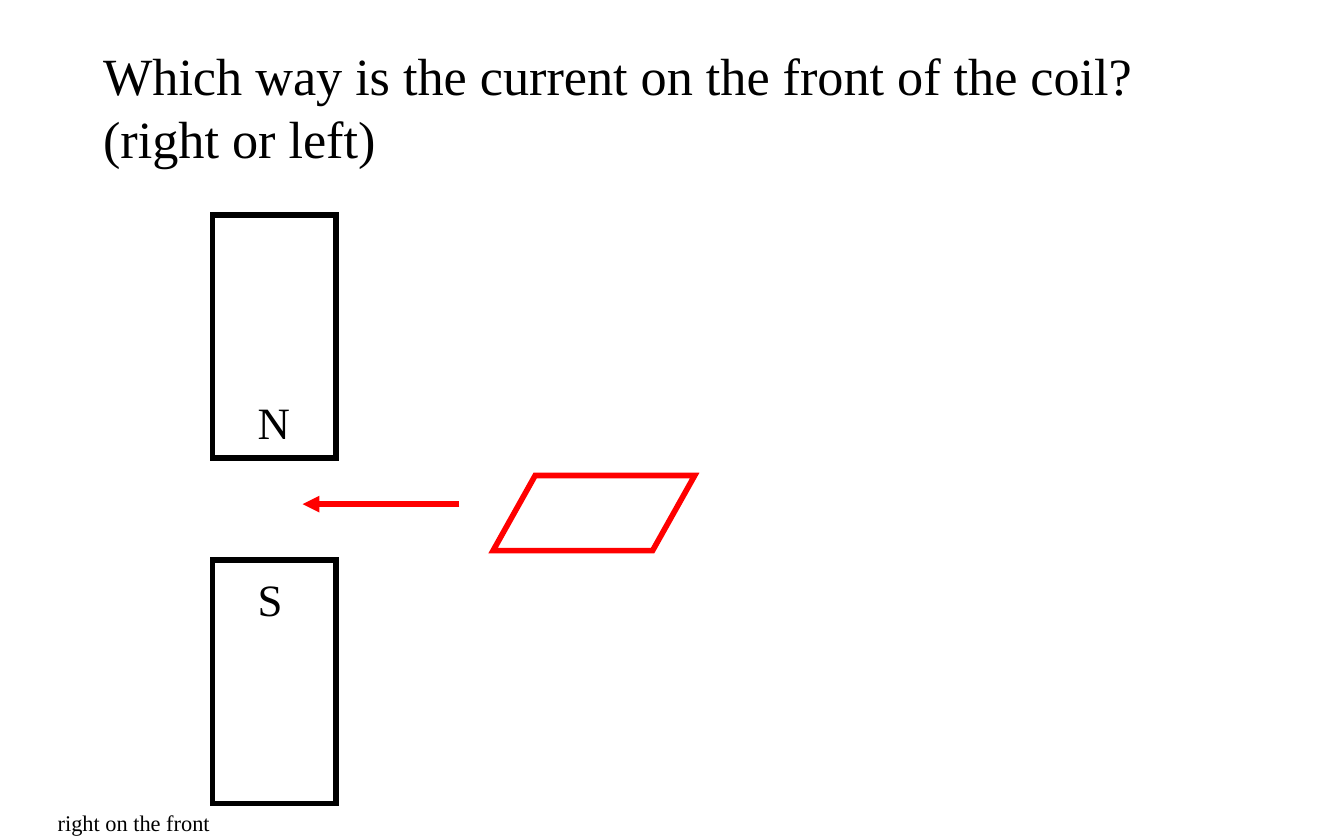
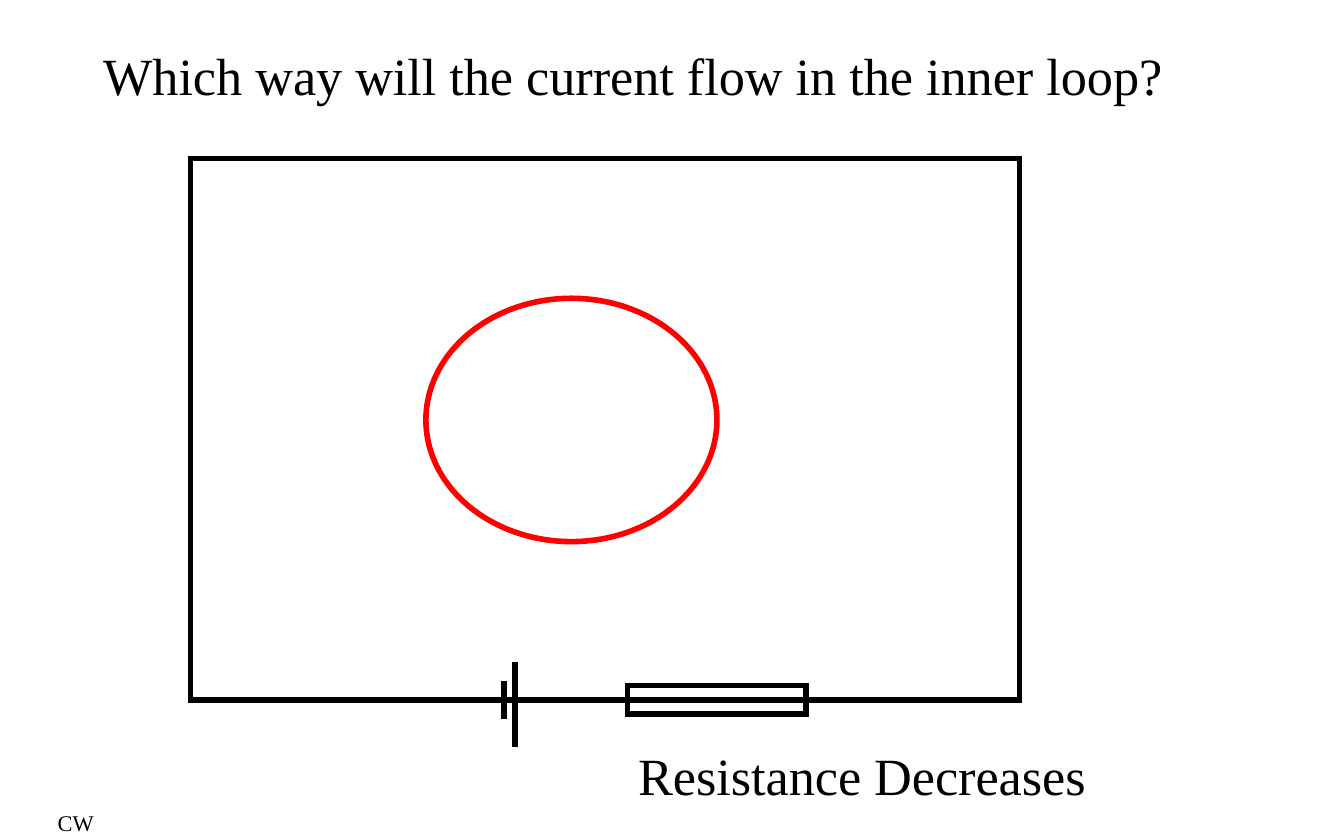
"""Build two slides of questions on induced current."""
from lxml import etree
from pptx import Presentation
from pptx.dml.color import RGBColor
from pptx.enum.shapes import MSO_CONNECTOR, MSO_SHAPE
from pptx.enum.text import MSO_AUTO_SIZE
from pptx.oxml.ns import qn
from pptx.util import Cm, Pt

RECT = MSO_SHAPE.RECTANGLE
OVAL = MSO_SHAPE.OVAL
SLANT = MSO_SHAPE.PARALLELOGRAM
STRAIGHT = MSO_CONNECTOR.STRAIGHT
FIT = MSO_AUTO_SIZE.SHAPE_TO_FIT_TEXT

BLACK = RGBColor(0, 0, 0)
RED = RGBColor(255, 0, 0)
FONT = "Times New Roman"


def write(slide, text, box, size, wrap=False):
    frame = slide.shapes.add_textbox(*map(Cm, box)).text_frame
    frame.word_wrap = wrap
    frame.auto_size = FIT
    frame.text = text
    font = frame.paragraphs[0].runs[0].font
    font.name = FONT
    font.size = Pt(size)
    font.color.rgb = BLACK


def draw(slide, kind, box, color=BLACK):
    if kind is STRAIGHT:
        shape = slide.shapes.add_connector(kind, *map(Cm, box))
        etree.SubElement(shape.element.spPr, qn("a:effectLst"))
    else:
        shape = slide.shapes.add_shape(kind, *map(Cm, box))
        shape.shadow.inherit = False
        shape.fill.background()
    shape.line.color.rgb = color
    shape.line.width = Pt(3)
    edge = shape.element.spPr.find(qn("a:ln"))
    etree.SubElement(edge, qn("a:miter"), lim="800000")
    return shape


deck = Presentation()
deck.slide_width = Cm(25.4)
deck.slide_height = Cm(15.88)

pages = []
for title, high, answer, wide in [
    ("Which way is the current on the front of the coil? (right or left)",
     2.64, "right on the front", 3.43),
    ("Which way will the current flow in the inner loop?", 1.45, "CW", 1.19),
]:
    page = deck.slides.add_slide(deck.slide_layouts[6])
    write(page, title, (1.7, 0.7, 22.23, high), 28, wrap=True)
    write(page, answer, (0.84, 15.18, wide, 0.76), 12)
    pages.append(page)
field, loop = pages

for pole, top, mark, wide in [("N", 4.06, 7.33, 1.14), ("S", 10.59, 10.68, 0.99)]:
    draw(field, RECT, (4.02, top, 2.33, 4.6))
    write(field, pole, (4.62, mark, wide, 1.27), 24)

coil = draw(field, SLANT, (9.32, 8.99, 3.81, 1.42), RED)
coil.adjustments[0] = 0.56
motion = draw(field, STRAIGHT, (8.68, 9.53, 5.72, 9.53), RED)
etree.SubElement(motion.element.spPr.find(qn("a:ln")), qn("a:tailEnd"), type="triangle")

draw(loop, OVAL, (8.05, 5.64, 5.5, 4.6), RED)
draw(loop, RECT, (3.6, 3, 15.67, 10.23))
base = 13.23
short, long = 9.53, 9.73
draw(loop, STRAIGHT, (6.99, base, short, base))
draw(loop, STRAIGHT, (short, 12.88, short, 13.59))
draw(loop, STRAIGHT, (long, 12.52, long, 14.12))
load = draw(loop, RECT, (11.86, base - 0.27, 3.38, 0.54))
right = draw(loop, STRAIGHT, (17.15, base, 15.24, base))
right.end_connect(load, 3)
left = draw(loop, STRAIGHT, (11.86, base, long, base))
left.begin_connect(load, 1)
write(loop, "Resistance Decreases", (11.81, 13.92, 9.04, 1.45), 28)

deck.save("out.pptx")
